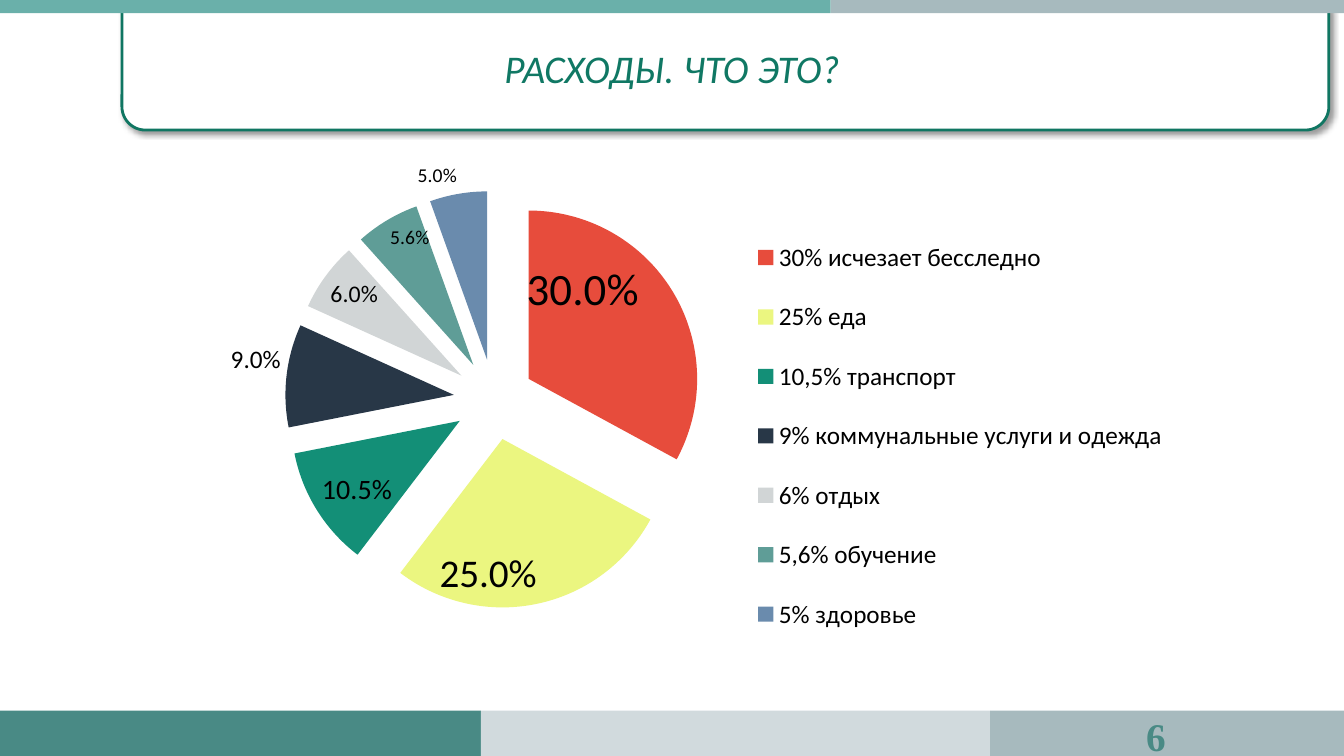
from dataclasses import dataclass
from lxml import etree
from pptx import Presentation
from pptx.chart.data import CategoryChartData
from pptx.dml.color import RGBColor
from pptx.enum.chart import XL_CHART_TYPE, XL_LABEL_POSITION, XL_LEGEND_POSITION
from pptx.enum.shapes import MSO_SHAPE
from pptx.enum.text import MSO_ANCHOR, PP_ALIGN
from pptx.oxml import parse_xml
from pptx.oxml.ns import nsdecls, qn
from pptx.util import Inches, Pt

PIE = XL_CHART_TYPE.PIE_EXPLODED
INSIDE, OUTSIDE = XL_LABEL_POSITION.INSIDE_END, XL_LABEL_POSITION.OUTSIDE_END
RECT, ROUNDED = MSO_SHAPE.RECTANGLE, MSO_SHAPE.ROUNDED_RECTANGLE

TITLE = "РАСХОДЫ. ЧТО ЭТО?"
PAGE = "6"
EXPENSES = [
    ("30% исчезает бесследно", 0.3, "E74C3C", 32, INSIDE, (-0.03, -0.06)),
    ("25% еда", 0.25, "EBF680", 28, INSIDE, None),
    ("10,5% транспорт", 0.105, "138F77", 20, INSIDE, None),
    ("9% коммунальные услуги и одежда", 0.09, "283747", 18, OUTSIDE, None),
    ("6% отдых", 0.06, "D1D5D6", 17, INSIDE, None),
    ("5,6% обучение", 0.056, "5F9D97", 14, INSIDE, None),
    ("5% здоровье", 0.05, "6A8BAD", 14, OUTSIDE, None),
]


@dataclass(frozen=True)
class Theme:
    font: str = "Calibri"
    page_font: str = "Times New Roman"
    heading: str = "107864"
    frame: str = "107662"
    text: str = "000000"
    paper: str = "FFFFFF"
    mint: str = "6AB0AA"
    steel: str = "A7BABE"
    teal: str = "498A85"
    mist: str = "D1DADD"
    heading_size: int = 28
    body_size: int = 18


theme = Theme()
WIDTH, HEIGHT = 13.33, 7.5
TOP_BAR = (-0.09, 0.22)
BOTTOM_BAR = (7.05, 0.45)
BANDS = [
    (TOP_BAR, 0, 8.24, theme.mint),
    (TOP_BAR, 8.24, WIDTH, theme.steel),
    (BOTTOM_BAR, 0, 4.77, theme.teal),
    (BOTTOM_BAR, 4.77, 9.82, theme.mist),
    (BOTTOM_BAR, 9.82, WIDTH, theme.steel),
]


def rgb(value):
    return RGBColor.from_string(value)


def box(*inches):
    return [Inches(value) for value in inches]


def style(font, name, size, color):
    font.name, font.size = name, Pt(size)
    font.color.rgb = rgb(color)


def add_block(preset, place, fill):
    block = slide.shapes.add_shape(preset, *box(*place))
    block.shadow.inherit = False
    block.fill.solid()
    block.fill.fore_color.rgb = rgb(fill)
    block.line.fill.background()
    return block


def manual_layout(**parts):
    children = "".join(f'<c:{tag} val="{value}"/>' for tag, value in parts.items())
    return parse_xml(f'<c:layout {nsdecls("c")}><c:manualLayout>{children}'
                     '</c:manualLayout></c:layout>')


def set_layout(parent, after, layout):
    for old in parent.findall(qn("c:layout")):
        parent.remove(old)
    parent.find(qn(after)).addnext(layout)


deck = Presentation()
deck.slide_width, deck.slide_height = box(WIDTH, HEIGHT)
slide = deck.slides.add_slide(deck.slide_layouts[5])

frame = add_block(ROUNDED, (1.21, -0.1, 11.97, 1.39), theme.paper)
frame.line.color.rgb = rgb(theme.frame)
frame.line.width = Pt(2)
effects = frame._element.spPr.find(qn("a:effectLst"))
shadow = etree.SubElement(effects, qn("a:outerShdw"), blurRad=str(Pt(4)),
                          dist=str(Pt(3)), dir="2700000", algn="tl", rotWithShape="0")
shade = etree.SubElement(shadow, qn("a:srgbClr"), val=theme.text)
etree.SubElement(shade, qn("a:alpha"), val="40000")

for (top, height), left, right, color in BANDS:
    add_block(RECT, (left, top, right - left, height), color)

title = slide.shapes.title
title.left, title.top, title.width, title.height = box(1.86, 0.36, 9.61, 0.61)
title.text_frame.text = TITLE
title.text_frame.vertical_anchor = MSO_ANCHOR.TOP
heading = title.text_frame.paragraphs[0]
heading.alignment = PP_ALIGN.CENTER
heading.line_spacing = 1.07
style(heading.font, theme.font, theme.heading_size, theme.heading)
heading.font.italic = True
slide.shapes._spTree.append(title._element)

expense_data = CategoryChartData(number_format="0.0%")
expense_data.categories = [expense[0] for expense in EXPENSES]
expense_data.add_series("Series 1", [expense[1] for expense in EXPENSES])
chart = slide.shapes.add_chart(PIE, *box(1.94, 1.39, 9.72, 5.59), expense_data).chart
chart.has_title = False
style(chart.font, theme.font, theme.body_size, theme.text)

chart.has_legend = True
chart.legend.position = XL_LEGEND_POSITION.RIGHT
chart.legend.include_in_layout = False
set_layout(chart.legend._element, "c:legendPos",
           manual_layout(xMode="edge", yMode="edge", x=0.57, y=0.13, w=0.42, h=0.79))
plot_area = chart._chartSpace.chart.plotArea
for old in plot_area.findall(qn("c:layout")):
    plot_area.remove(old)
plot_area.insert(0, manual_layout(layoutTarget="inner", xMode="edge", yMode="edge",
                                  x=0.058, y=0.09, w=0.493, h=0.741))

plot = chart.plots[0]
plot.vary_by_categories = True
plot.has_data_labels = True
plot.data_labels.number_format = "0.0%"
plot.data_labels.number_format_is_linked = False
plot.data_labels.show_value = True
plot.data_labels.show_percentage = False
spending = plot.series[0]
explosion = spending._element.find(qn("c:explosion"))
if explosion is None:
    explosion = parse_xml(f'<c:explosion {nsdecls("c")}/>')
    spending._element.find(qn("c:tx")).addnext(explosion)
explosion.set("val", "24")

for index, (_, _, color, size, position, shift) in enumerate(EXPENSES):
    point = spending.points[index]
    point.format.fill.solid()
    point.format.fill.fore_color.rgb = rgb(color)
    point.format.line.fill.background()
    label = point.data_label
    style(label.font, theme.font, size, theme.text)
    label.position = position
    if shift:
        set_layout(label._dLbl, "c:idx", manual_layout(x=shift[0], y=shift[1]))

labels = spending.data_labels
labels.number_format = "0.0%"
labels.number_format_is_linked = False
labels.show_value = True

page = slide.shapes.add_textbox(*box(10.83, 7.1, 0.83, 0.4)).text_frame
page.word_wrap = True
page.vertical_anchor = MSO_ANCHOR.MIDDLE
page.text = PAGE
number = page.paragraphs[0]
number.alignment = PP_ALIGN.RIGHT
style(number.font, theme.page_font, theme.heading_size, theme.teal)
number.font.bold = True

deck.save("out.pptx")
